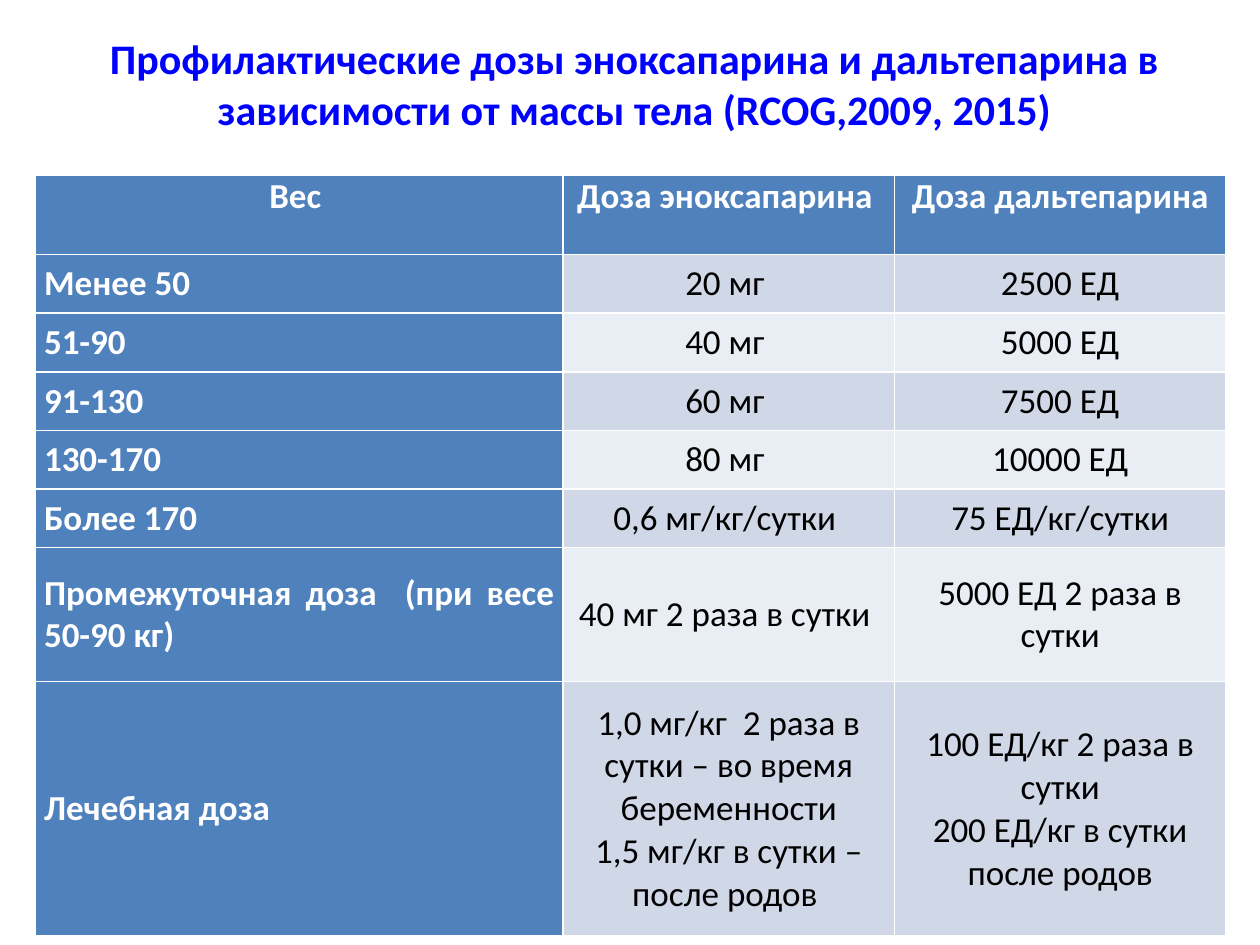
from pptx import Presentation
from pptx.dml.color import RGBColor
from pptx.enum.text import MSO_ANCHOR, PP_ALIGN
from pptx.util import Inches, Pt

CENTER, JUSTIFY = PP_ALIGN.CENTER, PP_ALIGN.JUSTIFY
TOP, MIDDLE = MSO_ANCHOR.TOP, MSO_ANCHOR.MIDDLE

# Content
TITLE = ("Профилактические дозы эноксапарина и дальтепарина "
         "в зависимости от массы тела (RCOG,2009, 2015)")
ROWS = [
    ("Вес ", "Доза эноксапарина ", "Доза дальтепарина"),
    ("Менее 50 ", "20 мг ", "2500 ЕД"),
    ("51-90 ", "40 мг ", "5000 ЕД"),
    ("91-130 ", "60 мг ", "7500 ЕД"),
    ("130-170", "80 мг ", "10000 ЕД"),
    ("Более 170 ", "0,6 мг/кг/сутки ", "75 ЕД/кг/сутки"),
    ("Промежуточная доза  (при весе 50-90 кг) ",
     "40 мг 2 раза в сутки ", "5000 ЕД 2 раза в сутки"),
    ("Лечебная доза ",
     "1,0 мг/кг  2 раза в сутки – во время беременности\n"
     "1,5 мг/кг в сутки –после родов ",
     "100 ЕД/кг 2 раза в сутки\n200 ЕД/кг в сутки после родов"),
]

THEME = {
    "font": "Calibri", "title_size": Pt(24), "cell_size": Pt(20),
    "title": RGBColor(0x00, 0x00, 0xFF),
    "head_fill": RGBColor(0x4F, 0x81, 0xBD),
    "head_text": RGBColor(0xFF, 0xFF, 0xFF),
    "body_text": RGBColor(0x00, 0x00, 0x00),
    "bands": (RGBColor(0xD0, 0xD8, 0xE8), RGBColor(0xE9, 0xED, 0xF4)),
}

# Grid: relative sizes of columns and rows share out the table's area
TITLE_BOX = (0.43, 0.21, 9.21, 0.91)
TABLE_BOX = (0.28, 1.39, 9.45, 6.04)
COL_SHARES = (4.19, 2.63, 2.63)
ROW_SHARES = (0.63, *[0.465] * 5, 1.06, 2.02)


def write(tf, text, size, color, bold, align):
    tf.text = text
    for p in tf.paragraphs:
        p.alignment = align
        p.font.name = THEME["font"]
        p.font.size = size
        p.font.bold = bold
        p.font.color.rgb = color


def share_out(total, shares):
    return [Inches(total * share / sum(shares)) for share in shares]


prs = Presentation()
prs.slide_width, prs.slide_height = Inches(10), Inches(7.5)
s = prs.slides.add_slide(prs.slide_layouts[6])

# Title
tf = s.shapes.add_textbox(*map(Inches, TITLE_BOX)).text_frame
tf.word_wrap = True
write(tf, TITLE, THEME["title_size"], THEME["title"], True, CENTER)

# Dose table
table = s.shapes.add_table(len(ROWS), len(COL_SHARES),
                           *map(Inches, TABLE_BOX)).table
table.first_col = True
for col, width in zip(table.columns, share_out(TABLE_BOX[2], COL_SHARES)):
    col.width = width
for row, height in zip(table.rows, share_out(TABLE_BOX[3], ROW_SHARES)):
    row.height = height

for i, texts in enumerate(ROWS):
    for j, text in enumerate(texts):
        cell = table.cell(i, j)
        head = i == 0 or j == 0
        cell.margin_left = cell.margin_right = Inches(0.07)
        cell.margin_top = cell.margin_bottom = 0
        cell.vertical_anchor = MIDDLE if i else TOP
        cell.fill.solid()
        cell.fill.fore_color.rgb = (
            THEME["head_fill"] if head else THEME["bands"][(i - 1) % 2])
        write(cell.text_frame, text, THEME["cell_size"],
              THEME["head_text" if head else "body_text"], head,
              JUSTIFY if i and j == 0 else CENTER)

prs.save("out.pptx")
